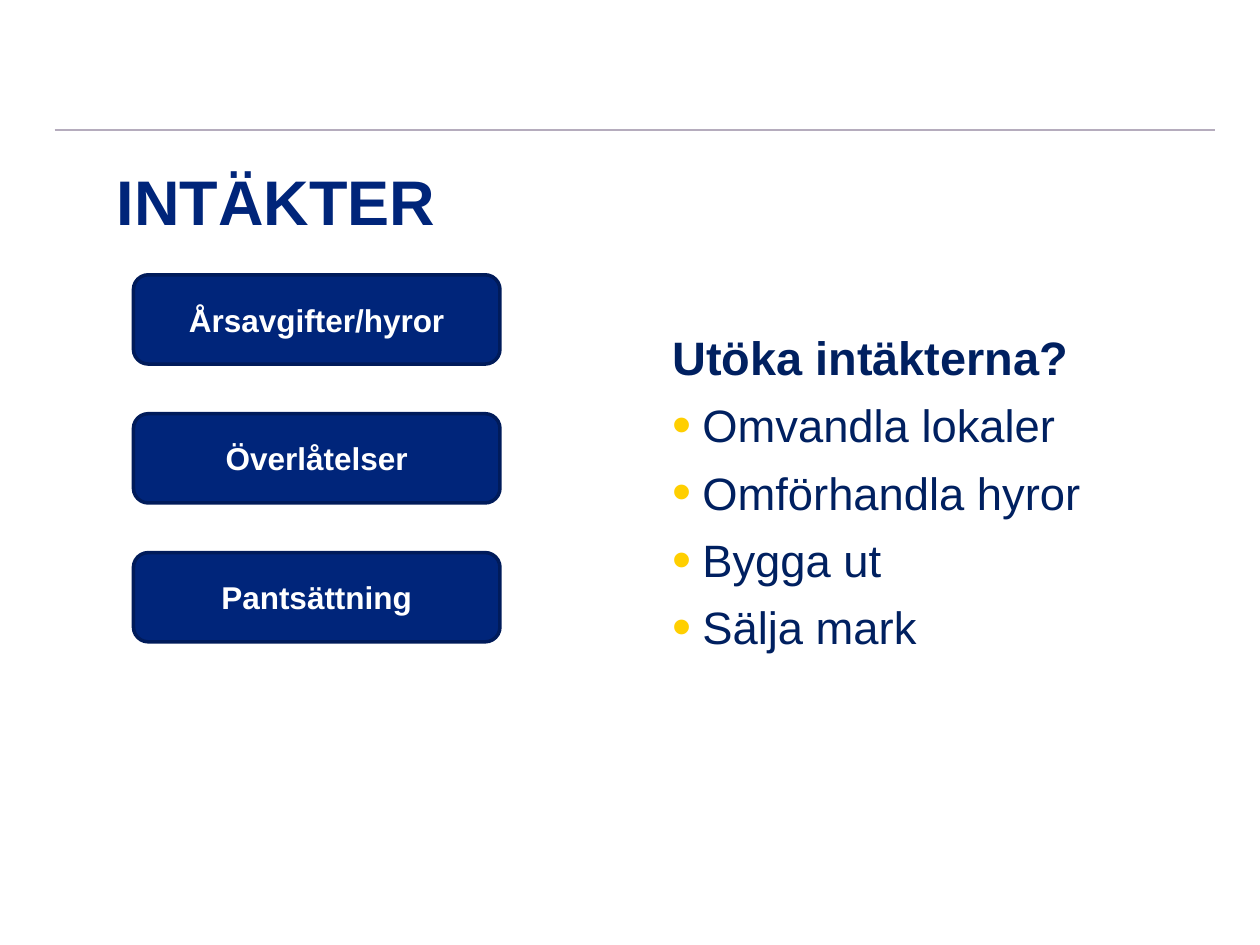
from dataclasses import dataclass

from lxml import etree
from pptx import Presentation
from pptx.dml.color import RGBColor
from pptx.enum.shapes import MSO_CONNECTOR, MSO_SHAPE
from pptx.enum.text import MSO_ANCHOR, MSO_AUTO_SIZE, PP_ALIGN
from pptx.oxml.ns import qn
from pptx.util import Cm, Pt

LINE = MSO_CONNECTOR.STRAIGHT
CARD = MSO_SHAPE.FLOWCHART_ALTERNATE_PROCESS
TOP, MID = MSO_ANCHOR.TOP, MSO_ANCHOR.MIDDLE
LEFT, CENTER = PP_ALIGN.LEFT, PP_ALIGN.CENTER
FIXED = MSO_AUTO_SIZE.NONE
FONT = "Arial"
HUES = {
    "rule": "B5ACBD",
    "blue": "00257A",
    "edge": "001B5A",
    "text": "002060",
    "dot": "FFCF00",
    "white": "FFFFFF",
}
CARDS = ("Årsavgifter/hyror", "Överlåtelser", "Pantsättning")


@dataclass
class Item:
    text: str
    size: float = 25.9
    head: bool = False


ITEMS = (
    Item("Utöka intäkterna?", 26.8, True),
    Item("Omvandla lokaler"),
    Item("Omförhandla hyror"),
    Item("Bygga ut"),
    Item("Sälja mark"),
)


def hue(name: str) -> RGBColor:
    return RGBColor.from_string(HUES[name])


def style(para, size: float, color: str, bold: bool, align=LEFT) -> None:
    para.alignment = align
    for run in para.runs:
        font = run.font
        font.name, font.size, font.bold = FONT, Pt(size), bold
        font.color.rgb = hue(color)


def add_rule(slide) -> None:
    rule = slide.shapes.add_connector(LINE, Cm(1.1), Cm(2.62), Cm(24.5), Cm(2.62))
    rule.line.color.rgb = hue("rule")
    rule.line.width = Pt(1.5)
    etree.SubElement(rule.element.spPr, qn("a:effectLst"))


def set_title(slide, text: str) -> None:
    title = slide.shapes.title
    title.left, title.top = Cm(2.1), Cm(3.12)
    title.width, title.height = Cm(22.28), Cm(3.2)
    frame = title.text_frame
    frame.text = text
    frame.auto_size = FIXED
    frame.vertical_anchor = TOP
    frame.margin_top = Cm(0.16)
    style(frame.paragraphs[0], 36, "blue", True)


def add_card(slide, row: int, text: str) -> None:
    card = slide.shapes.add_shape(
        CARD, Cm(2.69), Cm(5.54 + 2.8 * row), Cm(7.39), Cm(1.8)
    )
    card.shadow.inherit = False
    card.fill.solid()
    card.fill.fore_color.rgb = hue("blue")
    card.line.color.rgb = hue("edge")
    card.line.width = Pt(2)
    frame = card.text_frame
    frame.text = text
    frame.vertical_anchor = MID
    style(frame.paragraphs[0], 18, "white", True, CENTER)


def add_dot(para) -> None:
    props = para._p.get_or_add_pPr()
    tint = etree.SubElement(props, qn("a:buClr"))
    etree.SubElement(tint, qn("a:srgbClr"), val=HUES["dot"])
    etree.SubElement(props, qn("a:buSzPct"), val="120000")
    etree.SubElement(props, qn("a:buFont"), typeface=FONT)
    etree.SubElement(props, qn("a:buChar"), char="•")


def add_list(slide, items: tuple[Item, ...]) -> None:
    box = slide.shapes.add_textbox(Cm(13.31), Cm(6.4), Cm(11.4), Cm(6.53))
    frame = box.text_frame
    frame.word_wrap = True
    frame.margin_top = Cm(0.22)
    frame.text = "\n".join(item.text for item in items)
    for para, item in zip(frame.paragraphs, items):
        props = para._p.get_or_add_pPr()
        props.set("marL", str(Cm(0.6)))
        props.set("indent", str(Cm(-0.6)))
        if not item.head:
            add_dot(para)
            para.space_before = Pt(7.4)
        style(para, item.size, "text", item.head)


def main() -> None:
    """Build the slide on income and ways to raise it."""
    deck = Presentation()
    deck.slide_width, deck.slide_height = Cm(25.4), Cm(19.05)
    slide = deck.slides.add_slide(deck.slide_layouts[5])
    add_rule(slide)
    set_title(slide, "INTÄKTER")
    add_list(slide, ITEMS)
    for row, text in enumerate(CARDS):
        add_card(slide, row, text)
    deck.save("out.pptx")


if __name__ == "__main__":
    main()
